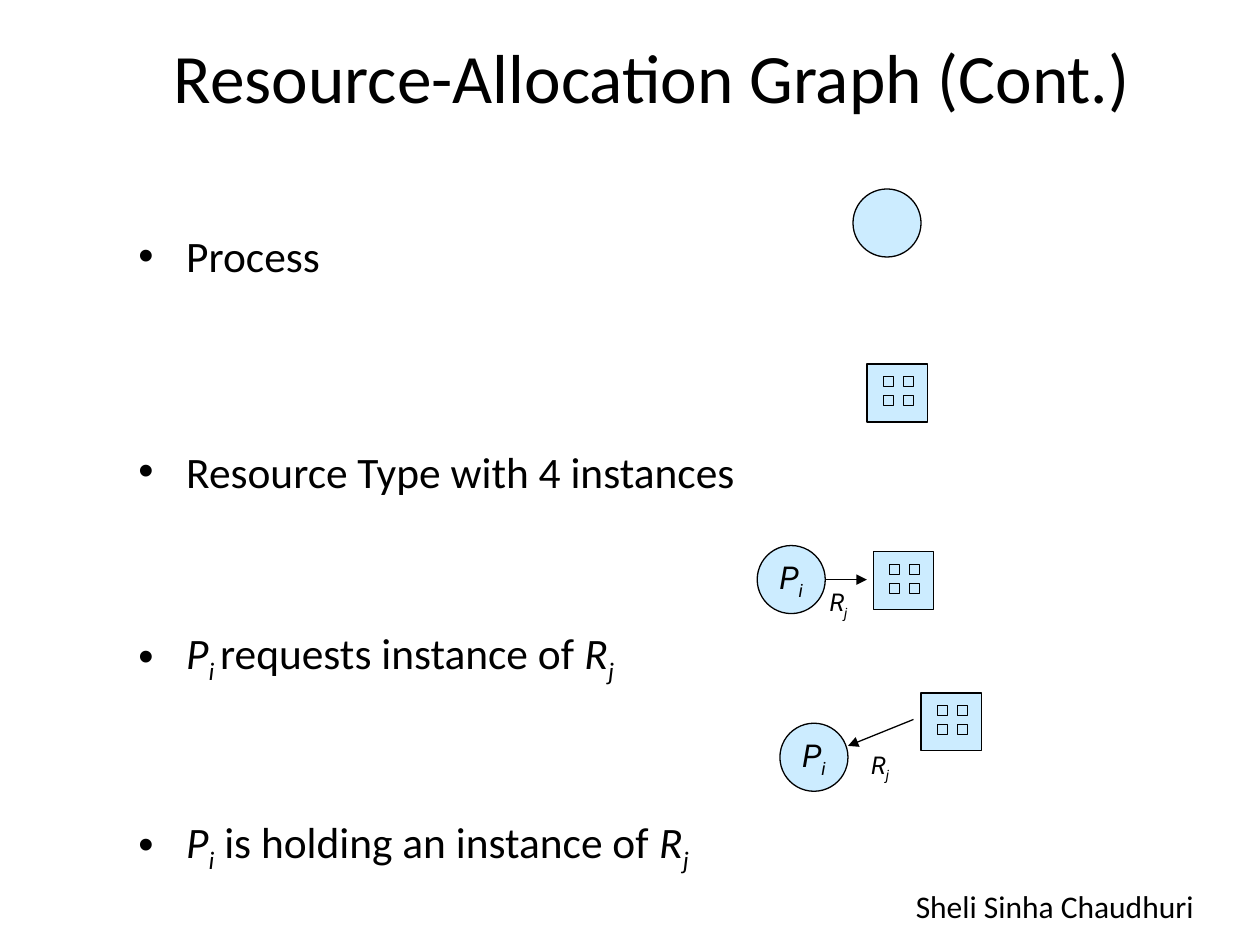
from itertools import product

from lxml.etree import SubElement
from pptx import Presentation
from pptx.dml.color import RGBColor
from pptx.enum.shapes import MSO_CONNECTOR, MSO_SHAPE
from pptx.enum.text import MSO_ANCHOR, PP_ALIGN
from pptx.oxml.ns import qn
from pptx.util import Inches, Pt

BLACK = RGBColor(0x00, 0x00, 0x00)
PALE_BLUE = RGBColor(0xCC, 0xEC, 0xFF)
TEXT_FONT = "Calibri"
LABEL_FONT = "Roboto"

# A run is (text, style), with style "" plain, "i" italic or "sub" italic subscript.
PROCESS_NAME = [("P", "i"), ("i", "sub")]
RESOURCE_NAME = [("R", "i"), ("j", "sub")]

# Each bullet: space before in points, runs
BULLETS = [
    (0, [("Process", "")]),
    (93.5, [("Resource Type with 4 instances", "")]),
    (74, [("P", "i"), ("i ", "sub"), ("requests instance of ", ""), *RESOURCE_NAME]),
    (74, [*PROCESS_NAME, (" is holding an instance of ", ""), *RESOURCE_NAME]),
]


class GraphSlide:
    """Holds the current slide and the look of its graph symbols."""

    diameter = 0.54
    resource_size = (0.48, 0.46)
    instance_side = 0.08
    instance_start = (0.13, 0.1)
    instance_step = (0.16, 0.15)
    line_width = Pt(0.75)

    def __init__(self, slide):
        self.slide = slide

    def add_runs(self, paragraph, runs, size, font=TEXT_FONT):
        for text, style in runs:
            run = paragraph.add_run()
            run.text = text
            look = {"name": font, "size": Pt(size), "italic": style != ""}
            for key, value in look.items():
                setattr(run.font, key, value)
            run.font.color.rgb = BLACK
            if style == "sub":
                run._r.get_or_add_rPr().set("baseline", "-25000")

    def title(self, text, left, top, width, height):
        heading = self.slide.shapes.title
        box = {"left": left, "top": top, "width": width, "height": height}
        for key, value in box.items():
            setattr(heading, key, Inches(value))
        heading.text_frame.vertical_anchor = MSO_ANCHOR.MIDDLE
        paragraph = heading.text_frame.paragraphs[0]
        paragraph.alignment = PP_ALIGN.CENTER
        self.add_runs(paragraph, [(text, "")], 39.6)

    def bullets(self, items, left, top, width, height):
        box = self.slide.shapes.add_textbox(*map(Inches, (left, top, width, height)))
        frame = box.text_frame
        frame.word_wrap = True
        for index, (gap, runs) in enumerate(items):
            paragraph = frame.paragraphs[0] if index == 0 else frame.add_paragraph()
            paragraph.space_before = Pt(gap)
            properties = paragraph._p.get_or_add_pPr()
            properties.set("marL", str(Inches(0.38)))
            properties.set("indent", str(Inches(-0.38)))
            SubElement(properties, qn("a:buFont"), typeface="Arial")
            SubElement(properties, qn("a:buChar"), char="•")
            self.add_runs(paragraph, runs, 24.8)

    def label(self, runs, left, top, width, height, size, font, alignment):
        box = self.slide.shapes.add_textbox(*map(Inches, (left, top, width, height)))
        box.text_frame.word_wrap = False
        box.text_frame.vertical_anchor = MSO_ANCHOR.MIDDLE
        paragraph = box.text_frame.paragraphs[0]
        paragraph.alignment = alignment
        self.add_runs(paragraph, runs, size, font)

    def resource_label(self, left, top):
        self.label(RESOURCE_NAME, left, top, 0.37, 0.33, 14, LABEL_FONT, PP_ALIGN.CENTER)

    def symbol(self, shapes, kind, left, top, width, height):
        shape = shapes.add_shape(kind, *map(Inches, (left, top, width, height)))
        shape.shadow.inherit = False
        shape.fill.solid()
        shape.fill.fore_color.rgb = PALE_BLUE
        shape.line.color.rgb = BLACK
        shape.line.width = self.line_width
        return shape

    def process(self, left, top, runs=()):
        circle = self.symbol(self.slide.shapes, MSO_SHAPE.OVAL, left, top,
                             self.diameter, self.diameter)
        frame = circle.text_frame
        frame.word_wrap = False
        frame.vertical_anchor = MSO_ANCHOR.MIDDLE
        frame.paragraphs[0].alignment = PP_ALIGN.CENTER
        self.add_runs(frame.paragraphs[0], runs, 18, LABEL_FONT)

    def resource(self, left, top):
        """Draw a resource type as a box grouped with its four instances."""
        members = self.slide.shapes.add_group_shape().shapes
        self.symbol(members, MSO_SHAPE.RECTANGLE, left, top, *self.resource_size)
        for row, column in product(range(2), repeat=2):
            self.symbol(members, MSO_SHAPE.RECTANGLE,
                        left + self.instance_start[0] + column * self.instance_step[0],
                        top + self.instance_start[1] + row * self.instance_step[1],
                        self.instance_side, self.instance_side)

    def arrow(self, start, end):
        edge = self.slide.shapes.add_connector(
            MSO_CONNECTOR.STRAIGHT, *map(Inches, (*start, *end)))
        edge.line.color.rgb = BLACK
        edge.line.width = self.line_width
        SubElement(edge.line._get_or_add_ln(), qn("a:tailEnd"), type="triangle")
        SubElement(edge._element.spPr, qn("a:effectLst"))


def main():
    deck = Presentation()
    deck.slide_width, deck.slide_height = Inches(10), Inches(7.5)
    graph = GraphSlide(deck.slides.add_slide(deck.slide_layouts[5]))

    graph.label([("Sheli Sinha Chaudhuri", "")], 7.17, 6.99, 2.44, 0.4, 18,
                TEXT_FONT, PP_ALIGN.LEFT)
    graph.title("Resource-Allocation Graph (Cont.)", 0.58, 0.2, 9.19, 0.8)
    graph.bullets(BULLETS, 1, 1.77, 8.03, 5.2)

    # Plain symbols
    graph.process(6.77, 1.5)
    graph.resource(6.88, 2.89)

    # Request edge
    graph.process(6.01, 4.33, PROCESS_NAME)
    graph.resource(6.93, 4.38)
    graph.arrow((6.55, 4.6), (6.88, 4.6))
    graph.resource_label(6.47, 4.63)

    # Assignment edge
    graph.process(6.19, 5.74, PROCESS_NAME)
    graph.resource(7.31, 5.5)
    graph.arrow((7.25, 5.71), (6.73, 5.92))
    graph.resource_label(6.8, 5.92)

    deck.save("out.pptx")


if __name__ == "__main__":
    main()
